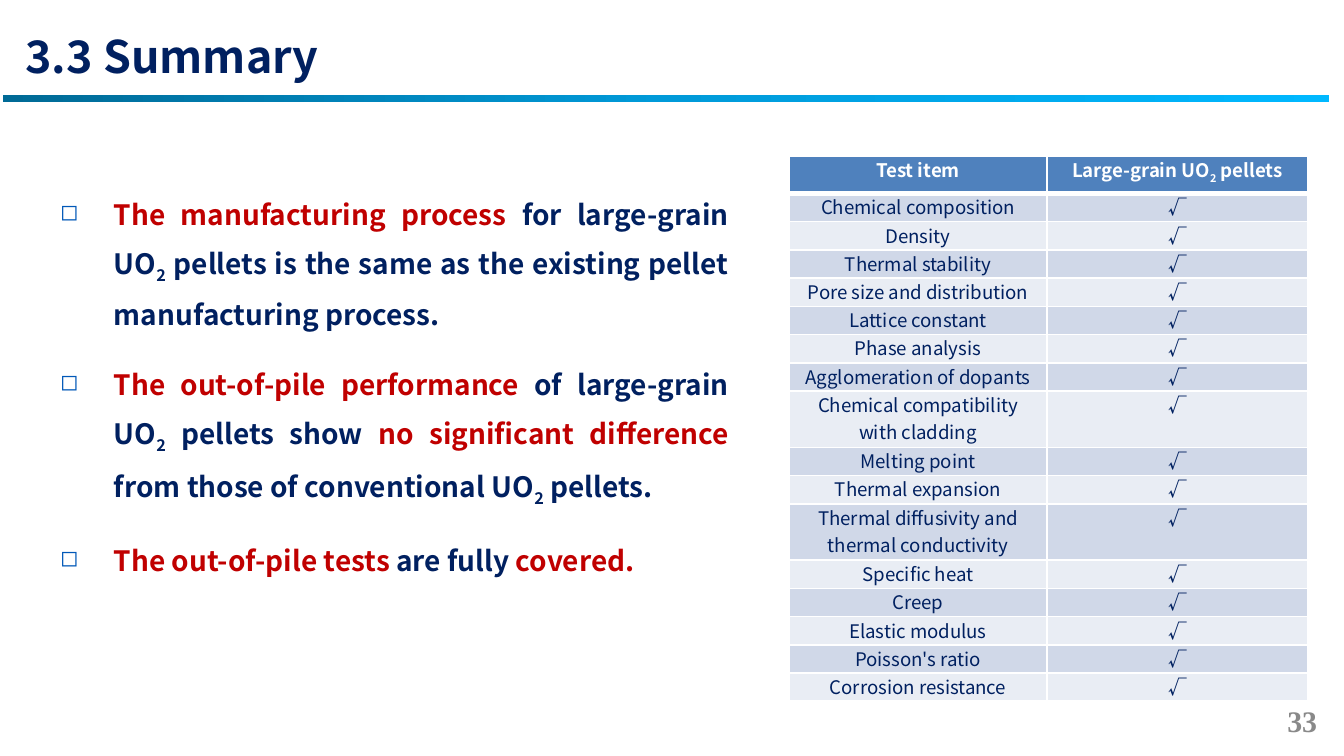
from copy import deepcopy
from typing import NamedTuple

from lxml.etree import SubElement
from pptx import Presentation
from pptx.dml.color import RGBColor
from pptx.enum.shapes import MSO_SHAPE
from pptx.enum.text import MSO_ANCHOR, MSO_AUTO_SIZE, PP_ALIGN
from pptx.oxml.ns import qn
from pptx.util import Inches, Pt

FONT = "Noto Sans CJK SC"
NUMBER_FONT = "Times New Roman"
NAVY = RGBColor(0x00, 0x20, 0x60)
RED = RGBColor(0xC0, 0x00, 0x00)
WHITE = RGBColor(0xFF, 0xFF, 0xFF)
GRAY = RGBColor(0x89, 0x89, 0x89)
BULLET_BLUE = RGBColor(0x00, 0x58, 0xB8)
HEADER_BLUE = RGBColor(0x4F, 0x81, 0xBD)
BAND_DARK = RGBColor(0xD0, 0xD8, 0xE8)
BAND_LIGHT = RGBColor(0xE9, 0xED, 0xF4)
BAR_COLORS = (RGBColor(0x00, 0x6A, 0x96), RGBColor(0x00, 0x9A, 0xD9), RGBColor(0x00, 0xB8, 0xFF))


class Part(NamedTuple):
    text: str
    color: RGBColor = NAVY
    subscript: bool = False


TWO = Part("2", subscript=True)
POINTS = [
    [Part("The manufacturing process ", RED), Part("for large-grain UO"), TWO,
     Part(" pellets is the same as the existing pellet manufacturing process.")],
    [Part("The out-of-pile performance ", RED), Part("of large-grain UO"), TWO,
     Part(" pellets show "), Part("no significant difference ", RED),
     Part("from those of conventional UO"), TWO, Part(" pellets.")],
    [Part("The out-of-pile tests ", RED), Part("are fully "), Part("covered.", RED)],
]
TEST_ITEMS = [
    "Chemical composition", "Density", "Thermal stability", "Pore size and distribution",
    "Lattice constant", "Phase analysis", "Agglomeration of dopants",
    "Chemical compatibility with cladding", "Melting point", "Thermal expansion",
    "Thermal diffusivity and thermal conductivity", "Specific heat", "Creep",
    "Elastic modulus", "Poisson's ratio", "Corrosion resistance",
]
TWO_LINE_ITEMS = {TEST_ITEMS[7], TEST_ITEMS[10]}


def add_text(paragraph, text: str, *, size: float, color: RGBColor = NAVY, bold: bool = True,
             font: str = FONT, subscript: bool = False) -> None:
    run = paragraph.add_run()
    run.text = text
    run.font.name = font
    run.font.size = Pt(size)
    run.font.bold = bold
    run.font.color.rgb = color
    if subscript:
        run._r.get_or_add_rPr().set("baseline", "-25000")


def add_bullet(paragraph) -> None:
    properties = paragraph._p.get_or_add_pPr()
    properties.set("marL", str(Inches(0.4)))
    properties.set("indent", str(-Inches(0.4)))
    bullet_color = SubElement(properties, qn("a:buClr"))
    SubElement(bullet_color, qn("a:srgbClr")).set("val", str(BULLET_BLUE))
    SubElement(properties, qn("a:buSzPct")).set("val", "80000")
    SubElement(properties, qn("a:buChar")).set("char", "◻")


def set_borders(cell, **widths: float) -> None:
    properties = cell._tc.get_or_add_tcPr()
    for side in "LRTB":
        line = SubElement(properties, qn(f"a:ln{side}"))
        line.set("w", str(Pt(widths.get(side, 1))))
        fill = SubElement(line, qn("a:solidFill"))
        SubElement(fill, qn("a:srgbClr")).set("val", str(WHITE))


def format_cell(cell, fill: RGBColor, parts: list[Part], bold: bool, **borders: float) -> None:
    set_borders(cell, **borders)
    cell.fill.solid()
    cell.fill.fore_color.rgb = fill
    cell.margin_left = cell.margin_right = Inches(0.07)
    cell.margin_top = cell.margin_bottom = 0
    paragraph = cell.text_frame.paragraphs[0]
    paragraph.alignment = PP_ALIGN.CENTER
    for part in parts:
        add_text(paragraph, part.text, size=10, color=part.color, bold=bold,
                 subscript=part.subscript)


def add_title(slide) -> None:
    title = slide.shapes.title
    title.left, title.top = Inches(0.08), Inches(0.16)
    title.width, title.height = Inches(8.27), Inches(0.51)
    frame = title.text_frame
    frame.auto_size = MSO_AUTO_SIZE.NONE
    frame.vertical_anchor = MSO_ANCHOR.TOP
    frame.margin_left = frame.margin_right = Inches(0.11)
    frame.paragraphs[0].alignment = PP_ALIGN.LEFT
    add_text(frame.paragraphs[0], "3.3 Summary", size=24)


def add_title_bar(slide) -> None:
    bar = slide.shapes.add_shape(MSO_SHAPE.RECTANGLE, Inches(0.02), Inches(0.71),
                                 Inches(9.87), Inches(0.05))
    bar.shadow.inherit = False
    bar.line.fill.background()
    bar.fill.gradient()
    bar.fill.gradient_angle = 0
    first_stop = bar.fill.gradient_stops[0]._gs
    first_stop.addnext(deepcopy(first_stop))
    for index, (stop, color) in enumerate(zip(bar.fill.gradient_stops, BAR_COLORS)):
        stop.position = index / 2
        stop.color.rgb = color


def add_points(slide) -> None:
    box = slide.shapes.add_textbox(Inches(0.35), Inches(1.32), Inches(5.17), Inches(2.87))
    frame = box.text_frame
    frame.word_wrap = True
    for index, parts in enumerate(POINTS):
        paragraph = frame.add_paragraph() if index else frame.paragraphs[0]
        paragraph.alignment = PP_ALIGN.JUSTIFY
        paragraph.line_spacing = 1.4
        paragraph.space_before = Pt(6 if index else 0)
        paragraph.space_after = Pt(6)
        add_bullet(paragraph)
        for part in parts:
            add_text(paragraph, part.text, size=15, color=part.color, subscript=part.subscript)


def add_test_table(slide) -> None:
    table = slide.shapes.add_table(len(TEST_ITEMS) + 1, 2, Inches(5.87), Inches(1.16),
                                   Inches(3.86), Inches(4.07)).table
    table.columns[0].width = Inches(1.92)
    table.columns[1].width = Inches(1.94)

    # Header row
    table.rows[0].height = Inches(0.28)
    headers = [[Part("Test item", WHITE)],
               [Part("Large-grain UO", WHITE), Part("2", WHITE, True), Part(" pellets", WHITE)]]
    for column, parts in enumerate(headers):
        format_cell(table.cell(0, column), HEADER_BLUE, parts, True, B=3)

    # Banded item rows
    for row, item in enumerate(TEST_ITEMS, start=1):
        table.rows[row].height = Inches(0.42 if item in TWO_LINE_ITEMS else 0.21)
        fill = BAND_DARK if row % 2 else BAND_LIGHT
        top = 3 if row == 1 else 1
        format_cell(table.cell(row, 0), fill, [Part(item)], False, T=top)
        format_cell(table.cell(row, 1), fill, [Part("√")], True, T=top)


def add_slide_number(slide) -> None:
    box = slide.shapes.add_textbox(Inches(7.54), Inches(5.21), Inches(2.33), Inches(0.3))
    frame = box.text_frame
    frame.word_wrap = True
    frame.vertical_anchor = MSO_ANCHOR.MIDDLE
    frame.margin_left = frame.margin_right = Inches(0.07)
    frame.margin_top = frame.margin_bottom = Inches(0.04)
    frame.paragraphs[0].alignment = PP_ALIGN.RIGHT
    add_text(frame.paragraphs[0], "33", size=16, color=GRAY, font=NUMBER_FONT)


def main() -> None:
    presentation = Presentation()
    presentation.slide_width = Inches(10)
    presentation.slide_height = Inches(10) * 9 // 16  # widescreen
    slide = presentation.slides.add_slide(presentation.slide_layouts[5])
    add_slide_number(slide)
    add_title_bar(slide)
    add_points(slide)
    add_title(slide)
    add_test_table(slide)
    presentation.save("out.pptx")


if __name__ == "__main__":
    main()
